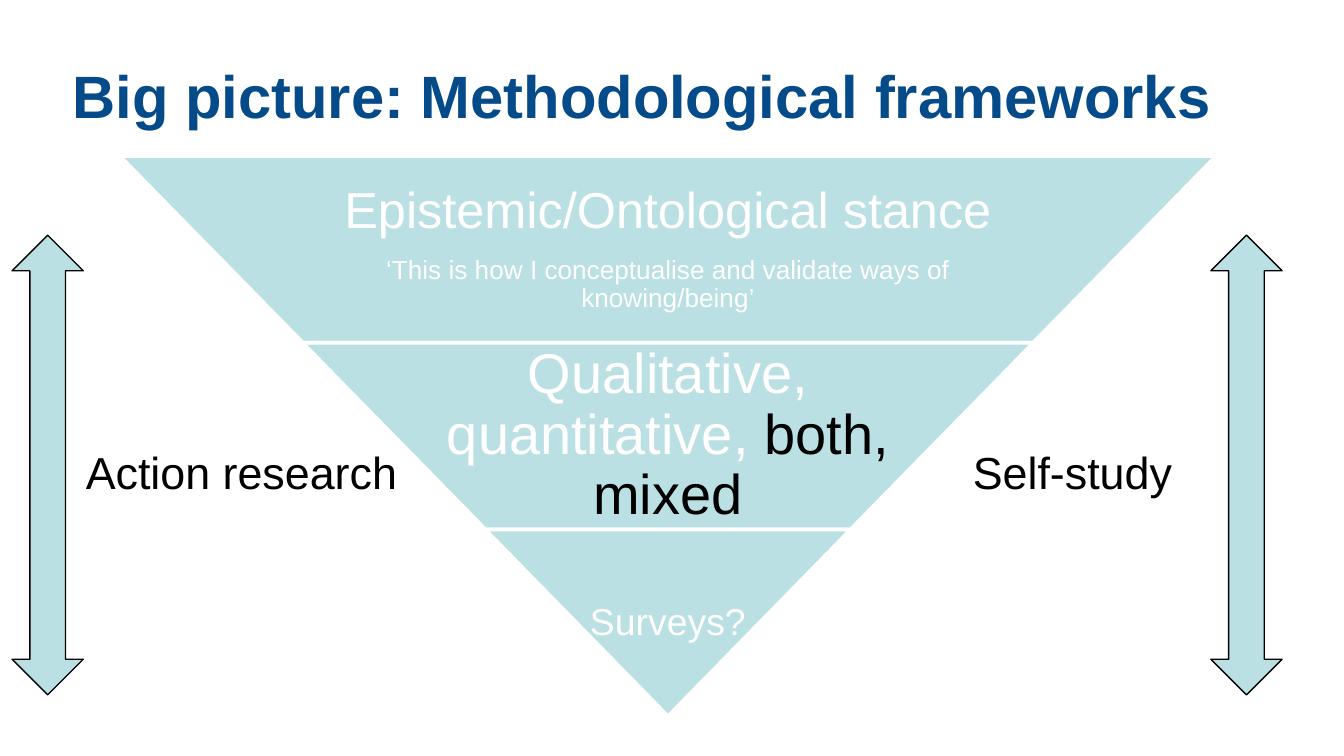
"""Build the slide on methodological frameworks as an inverted pyramid."""
from pptx import Presentation
from pptx.dml.color import RGBColor
from pptx.enum.shapes import MSO_SHAPE
from pptx.enum.text import MSO_ANCHOR, MSO_AUTO_SIZE, PP_ALIGN
from pptx.util import Inches, Pt

NAVY = RGBColor(0x05, 0x4A, 0x89)
AQUA = RGBColor(0xBB, 0xE0, 0xE3)
WHITE = RGBColor(0xFF, 0xFF, 0xFF)
BLACK = RGBColor(0x00, 0x00, 0x00)


def write(paragraph, text, size, color, bold=False, align=PP_ALIGN.LEFT, spacing=1.0, after=0):
    paragraph.alignment = align
    paragraph.line_spacing = spacing
    paragraph.space_before = Pt(0)
    paragraph.space_after = Pt(after)
    run = paragraph.add_run()
    run.text = text
    run.font.name = "Arial"
    run.font.size = Pt(size)
    run.font.bold = bold
    run.font.color.rgb = color


def style(shape, line_color, line_width):
    shape.shadow.inherit = False
    shape.fill.solid()
    shape.fill.fore_color.rgb = AQUA
    shape.line.color.rgb = line_color
    shape.line.width = Pt(line_width)


prs = Presentation()
prs.slide_width = Inches(10)
prs.slide_height = Inches(10 * 9 / 16)
slide = prs.slides.add_slide(prs.slide_layouts[5])

title = slide.shapes.title
title.left, title.top = Inches(0.44), Inches(0.45)
title.width, title.height = Inches(9.07), Inches(0.71)
title.text_frame.vertical_anchor = MSO_ANCHOR.TOP
title.text_frame.auto_size = MSO_AUTO_SIZE.NONE
write(title.text_frame.paragraphs[0], "Big picture: Methodological frameworks",
      size=32, color=NAVY, bold=True, spacing=0.9)

TIERS = [
    (5.31, 0.04, [[("Epistemic/Ontological stance", 27, WHITE)],
                  [("‘This is how I conceptualise and validate ways of knowing/being’", 14, WHITE)]]),
    (3.54, 0.04, [[("Qualitative, quantitative,", 30, WHITE), (" both, mixed", 30, BLACK)]]),
    (2.72, 0.03, [[("Surveys?", 20, WHITE)]]),
]
TIER_HEIGHT = 1.39
TIP_WIDTH = 2.72
PYRAMID_CENTER = 4.97

pyramid = slide.shapes.add_group_shape()
for level, (text_width, inset, paragraphs) in enumerate(TIERS):
    top = 1.16 + level * TIER_HEIGHT
    width = TIP_WIDTH * (len(TIERS) - level)
    tier = pyramid.shapes.add_shape(
        MSO_SHAPE.TRAPEZOID, Inches(PYRAMID_CENTER - width / 2), Inches(top),
        Inches(width), Inches(TIER_HEIGHT))
    tier.rotation = 180
    tier.adjustments[0] = 0.98
    style(tier, WHITE, 2)

    caption = pyramid.shapes.add_textbox(
        Inches(PYRAMID_CENTER - text_width / 2), Inches(top),
        Inches(text_width), Inches(TIER_HEIGHT)).text_frame
    caption.word_wrap = True
    caption.vertical_anchor = MSO_ANCHOR.MIDDLE
    caption.margin_left = caption.margin_right = Inches(inset)
    caption.margin_top = caption.margin_bottom = Inches(inset)
    for index, runs in enumerate(paragraphs):
        paragraph = caption.add_paragraph() if index else caption.paragraphs[0]
        for text, size, color in runs:
            write(paragraph, text, size=size, color=color, align=PP_ALIGN.CENTER,
                  spacing=0.9, after=0.35 * size)

for approach, left, width in [("Action research", 0.54, 2.54), ("Self-study", 7.14, 1.79)]:
    label = slide.shapes.add_textbox(
        Inches(left), Inches(3.26), Inches(width), Inches(0.5)).text_frame
    label.word_wrap = False
    label.auto_size = MSO_AUTO_SIZE.SHAPE_TO_FIT_TEXT
    write(label.paragraphs[0], approach, size=24, color=BLACK)

for left in (0.09, 9.01):
    arrow = slide.shapes.add_shape(
        MSO_SHAPE.UP_DOWN_ARROW, Inches(left), Inches(1.75), Inches(0.53), Inches(3.42))
    style(arrow, BLACK, 0.75)

prs.save("out.pptx")
